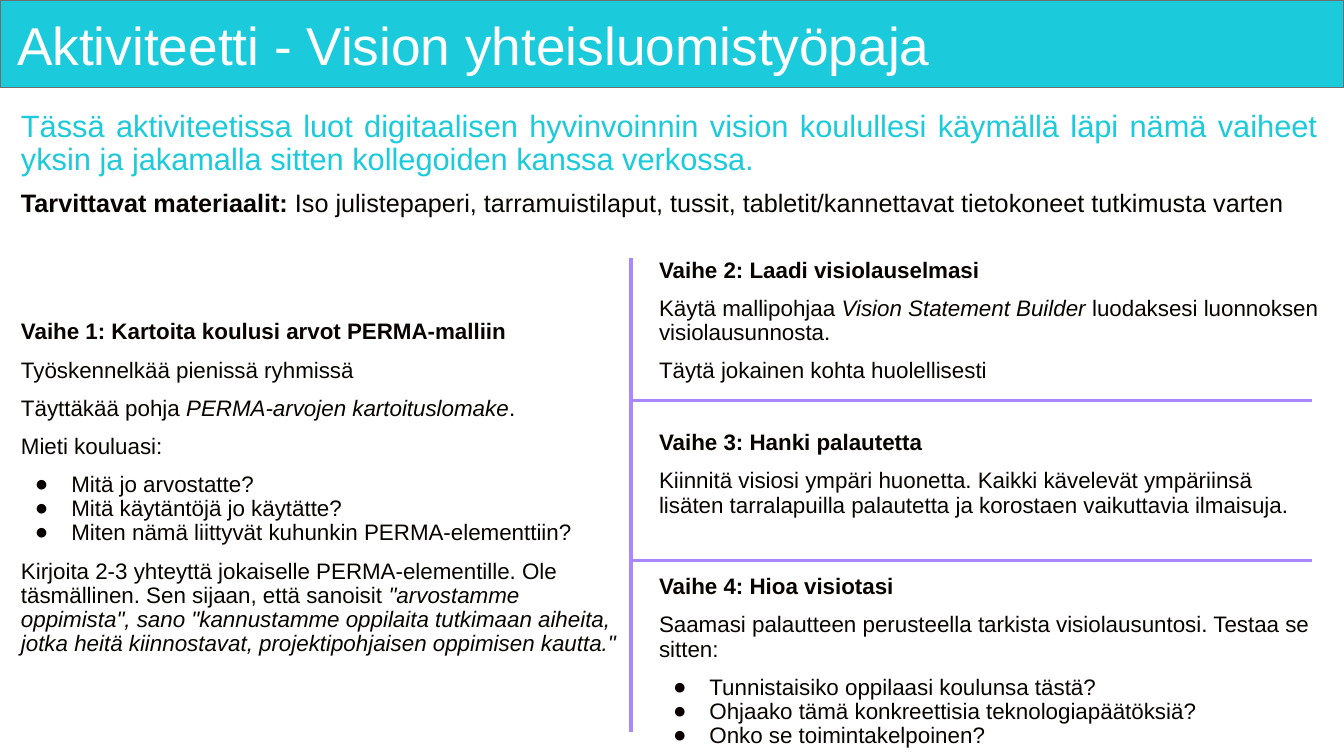
"""Build the slide for the vision co-creation workshop activity."""
from dataclasses import dataclass

import pptx
import pptx.dml.color
import pptx.enum.shapes
import pptx.enum.text
import pptx.oxml.ns
import pptx.slide
import pptx.text.text
import pptx.util
from lxml import etree

Pt = pptx.util.Pt
RGBColor = pptx.dml.color.RGBColor
Align = pptx.enum.text.PP_ALIGN
Anchor = pptx.enum.text.MSO_ANCHOR

TURQUOISE = RGBColor(0x1B, 0xCB, 0xDC)
GREY = RGBColor(0x6C, 0x6E, 0x70)
VIOLET = RGBColor(0xAA, 0x87, 0xFF)
INK = RGBColor(0x08, 0x03, 0x01)
WHITE = RGBColor(0xFF, 0xFF, 0xFF)

FONT = "Arial"
SLIDE_WIDTH, SLIDE_HEIGHT = 960, 540
BANNER_HEIGHT = 62.6
LEFT = 7.9
RIGHT_COLUMN, RIGHT_WIDTH = 463.7, 485.3
BULLET_INDENT, BULLET_HANG = 36, 26


@dataclass(frozen=True)
class Run:
    text: str
    bold: bool = False
    italic: bool = False


@dataclass(frozen=True)
class Paragraph:
    runs: tuple[Run, ...]
    size: float = 16
    color: RGBColor = INK
    align: Align = Align.LEFT
    before: float = 10
    after: float = 0
    bullet: bool = False


@dataclass(frozen=True)
class Block:
    left: float
    top: float
    width: float
    height: float
    paragraphs: tuple[Paragraph, ...]
    anchor: Anchor = Anchor.TOP


@dataclass(frozen=True)
class Divider:
    x1: float
    y1: float
    x2: float
    y2: float


def heading(text: str) -> Paragraph:
    return Paragraph((Run(text, bold=True),))


def body(*runs: Run) -> Paragraph:
    return Paragraph(runs)


def bullets(*items: str) -> tuple[Paragraph, ...]:
    return tuple(
        Paragraph((Run(item),), before=0 if index else 10, bullet=True)
        for index, item in enumerate(items)
    )


BLOCKS = (
    Block(LEFT, 63.4, 940.3, 108, (
        Paragraph((Run("Tässä aktiviteetissa luot digitaalisen hyvinvoinnin vision koulullesi "
                       "käymällä läpi nämä vaiheet yksin ja jakamalla sitten kollegoiden kanssa "
                       "verkossa."),), 22, TURQUOISE, Align.JUSTIFY),
        Paragraph((Run("Tarvittavat materiaalit: ", bold=True),
                   Run("Iso julistepaperi, tarramuistilaput, tussit, tabletit/kannettavat "
                       "tietokoneet tutkimusta varten")), 18, INK, Align.JUSTIFY, after=10),
    ), Anchor.MIDDLE),
    Block(LEFT, 225.4, 443.5, 258.5, (
        heading("Vaihe 1: Kartoita koulusi arvot PERMA-malliin"),
        body(Run("Työskennelkää pienissä ryhmissä")),
        body(Run("Täyttäkää pohja "), Run("PERMA-arvojen kartoituslomake", italic=True), Run(".")),
        body(Run("Mieti kouluasi:")),
        *bullets("Mitä jo arvostatte?", "Mitä käytäntöjä jo käytätte?",
                 "Miten nämä liittyvät kuhunkin PERMA-elementtiin?"),
        body(Run("Kirjoita 2-3 yhteyttä jokaiselle PERMA-elementille. Ole täsmällinen. "
                 "Sen sijaan, että sanoisit "),
             Run('"arvostamme oppimista", sano "kannustamme oppilaita tutkimaan aiheita, '
                 'jotka heitä kiinnostavat, projektipohjaisen oppimisen kautta."', italic=True)),
    )),
    Block(RIGHT_COLUMN, 181.4, RIGHT_WIDTH, 108, (
        heading("Vaihe 2: Laadi visiolauselmasi"),
        body(Run("Käytä mallipohjaa "), Run("Vision Statement Builder", italic=True),
             Run(" luodaksesi luonnoksen visiolausunnosta.")),
        body(Run("Täytä jokainen kohta huolellisesti")),
    )),
    Block(RIGHT_COLUMN, 304.6, RIGHT_WIDTH, 94.3, (
        heading("Vaihe 3: Hanki palautetta"),
        body(Run("Kiinnitä visiosi ympäri huonetta. Kaikki kävelevät ympäriinsä lisäten "
                 "tarralapuilla palautetta ja korostaen vaikuttavia ilmaisuja.")),
    )),
    Block(RIGHT_COLUMN, 407.5, RIGHT_WIDTH, 135.4, (
        heading("Vaihe 4: Hioa visiotasi"),
        body(Run("Saamasi palautteen perusteella tarkista visiolausuntosi. Testaa se sitten:")),
        *bullets("Tunnistaisiko oppilaasi koulunsa tästä?",
                 "Ohjaako tämä konkreettisia teknologiapäätöksiä?",
                 "Onko se toimintakelpoinen?"),
    )),
)

DIVIDERS = (
    Divider(450.7, 184.3, 450.7, 522.7),
    *(Divider(452.2, y, 937.4, y) for y in (285.8, 400.3)),
)


def apply(target: object, values: dict[str, object]) -> None:
    for name, value in values.items():
        setattr(target, name, value)


def format_frame(frame: pptx.text.text.TextFrame, anchor: Anchor,
                 side: float, edge: float) -> None:
    apply(frame, {
        "word_wrap": True, "auto_size": pptx.enum.text.MSO_AUTO_SIZE.NONE,
        "vertical_anchor": anchor, "margin_left": Pt(side), "margin_right": Pt(side),
        "margin_top": Pt(edge), "margin_bottom": Pt(edge),
    })


def add_bullet(paragraph: pptx.text.text._Paragraph) -> None:
    properties = paragraph._p.get_or_add_pPr()
    properties.set("marL", str(Pt(BULLET_INDENT)))
    properties.set("indent", str(-Pt(BULLET_HANG)))
    color = etree.SubElement(properties, pptx.oxml.ns.qn("a:buClr"))
    etree.SubElement(color, pptx.oxml.ns.qn("a:srgbClr")).set("val", str(INK))
    etree.SubElement(properties, pptx.oxml.ns.qn("a:buFont")).set("typeface", FONT)
    etree.SubElement(properties, pptx.oxml.ns.qn("a:buChar")).set("char", "●")


def fill_frame(frame: pptx.text.text.TextFrame, paragraphs: tuple[Paragraph, ...]) -> None:
    for index, item in enumerate(paragraphs):
        paragraph = frame.add_paragraph() if index else frame.paragraphs[0]
        apply(paragraph, {
            "alignment": item.align, "line_spacing": 0.9,
            "space_before": Pt(item.before if index else 0), "space_after": Pt(item.after),
        })
        if item.bullet:
            add_bullet(paragraph)
        for part in item.runs:
            run = paragraph.add_run()
            run.text = part.text
            apply(run.font, {"name": FONT, "size": Pt(item.size),
                             "bold": part.bold, "italic": part.italic})
            run.font.color.rgb = item.color


def add_header(slide: pptx.slide.Slide) -> None:
    banner = slide.shapes.add_shape(pptx.enum.shapes.MSO_SHAPE.RECTANGLE,
                                    0, 0, Pt(SLIDE_WIDTH), Pt(BANNER_HEIGHT))
    banner.shadow.inherit = False
    banner.fill.solid()
    banner.fill.fore_color.rgb = TURQUOISE
    banner.line.color.rgb = GREY
    banner.line.width = Pt(1)
    title = slide.shapes.title
    banner.element.addnext(title.element)
    apply(title, {"left": Pt(LEFT), "top": Pt(6.5), "width": Pt(940.3), "height": Pt(56.1)})
    format_frame(title.text_frame, Anchor.MIDDLE, 4.3, 4.3)
    fill_frame(title.text_frame, (
        Paragraph((Run("Aktiviteetti - Vision yhteisluomistyöpaja"),), 38, WHITE),))


def add_block(slide: pptx.slide.Slide, block: Block) -> None:
    shape = slide.shapes.add_textbox(Pt(block.left), Pt(block.top),
                                     Pt(block.width), Pt(block.height))
    format_frame(shape.text_frame, block.anchor, 7.2, 3.6)
    fill_frame(shape.text_frame, block.paragraphs)


def add_divider(slide: pptx.slide.Slide, divider: Divider) -> None:
    line = slide.shapes.add_connector(pptx.enum.shapes.MSO_CONNECTOR.STRAIGHT,
                                      Pt(divider.x1), Pt(divider.y1),
                                      Pt(divider.x2), Pt(divider.y2))
    line.line.color.rgb = VIOLET
    line.line.width = Pt(2.25)
    etree.SubElement(line.element.spPr, pptx.oxml.ns.qn("a:effectLst"))


def main() -> None:
    presentation = pptx.Presentation()
    apply(presentation, {"slide_width": Pt(SLIDE_WIDTH), "slide_height": Pt(SLIDE_HEIGHT)})
    slide = presentation.slides.add_slide(presentation.slide_layouts[5])
    add_header(slide)
    for block in BLOCKS:
        add_block(slide, block)
    for divider in DIVIDERS:
        add_divider(slide, divider)
    presentation.save("out.pptx")


if __name__ == "__main__":
    main()
